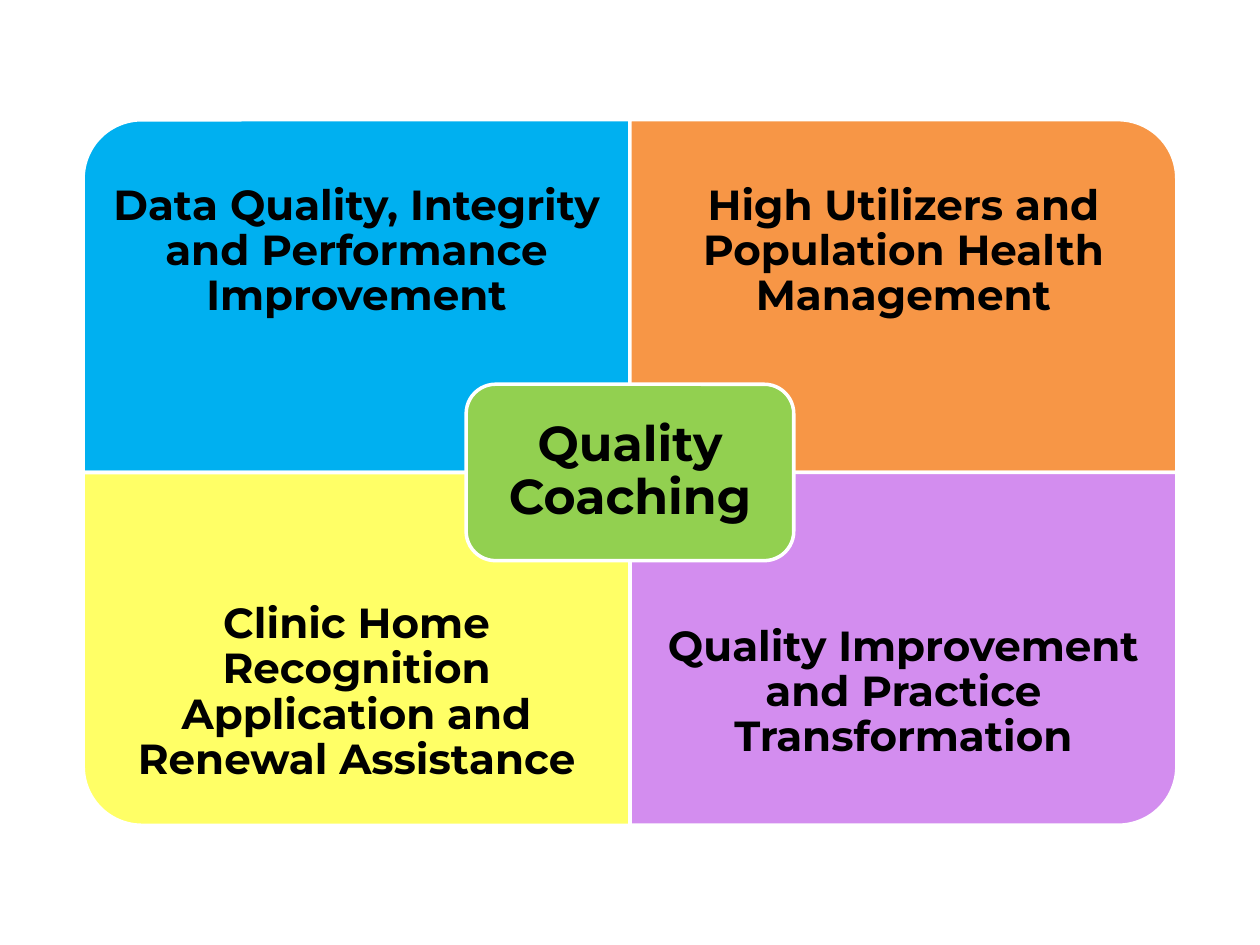
"""Build a four-quadrant Quality Coaching slide."""
from dataclasses import dataclass

from pptx import Presentation
from pptx import util as u
from pptx.dml.color import RGBColor
from pptx.enum import shapes, text

SCALE = 9144
COLOURS = {
    "blue": "00B0F0",
    "orange": "F79646",
    "yellow": "FFFF66",
    "purple": "D38DEF",
    "green": "92D050",
    "white": "FFFFFF",
    "black": "000000",
}
SLIDE_WIDTH, SLIDE_HEIGHT = 1000, 750
CENTRE_X, CENTRE_Y = SLIDE_WIDTH // 2, SLIDE_HEIGHT // 2
QUADRANT_WIDTH, QUADRANT_HEIGHT = 434, 280
LABEL_HEIGHT = 210
HUB_WIDTH, HUB_HEIGHT = 260, 140
HUB_INSET = 7


@dataclass(frozen=True)
class Box:
    left: int
    top: int
    width: int
    height: int

    def emu(self) -> tuple[int, ...]:
        return tuple(value * SCALE for value in (self.left, self.top, self.width, self.height))


@dataclass(frozen=True)
class Quadrant:
    label: str
    colour: str
    column: int
    row: int
    rotation: int


QUADRANTS = (
    Quadrant("Data Quality, Integrity and Performance Improvement", "blue", 0, 0, 270),
    Quadrant("High Utilizers and Population Health Management", "orange", 1, 0, 0),
    Quadrant("Clinic Home Recognition Application and Renewal Assistance", "yellow", 0, 1, 180),
    Quadrant("Quality Improvement and Practice Transformation", "purple", 1, 1, 90),
)


def colour_of(name: str) -> RGBColor:
    return RGBColor.from_string(COLOURS[name])


def draw_panel(slide, kind, box: Box, colour: str, rotation: int = 0) -> None:
    shape = slide.shapes.add_shape(kind, *box.emu())
    shape.rotation = rotation
    shape.shadow.inherit = False
    shape.fill.solid()
    shape.fill.fore_color.rgb = colour_of(colour)
    shape.line.color.rgb = colour_of("white")
    shape.line.width = u.Pt(2)


def draw_label(slide, label: str, box: Box, size: int, inset: int) -> None:
    frame = slide.shapes.add_textbox(*box.emu()).text_frame
    frame.word_wrap = True
    frame.vertical_anchor = text.MSO_ANCHOR.MIDDLE
    frame.margin_left = frame.margin_right = inset * SCALE
    frame.margin_top = frame.margin_bottom = inset * SCALE
    paragraph = frame.paragraphs[0]
    paragraph.text = label
    paragraph.alignment = text.PP_ALIGN.CENTER
    paragraph.line_spacing = 0.9
    paragraph.font.name = "Montserrat"
    paragraph.font.size = u.Pt(size)
    paragraph.font.bold = True
    paragraph.font.color.rgb = colour_of("black")


def draw_quadrant(slide, quadrant: Quadrant) -> None:
    left = CENTRE_X + (quadrant.column - 1) * QUADRANT_WIDTH
    top = CENTRE_Y + (quadrant.row - 1) * QUADRANT_HEIGHT
    width, height = QUADRANT_WIDTH, QUADRANT_HEIGHT
    if quadrant.rotation % 180:
        width, height = height, width
    panel = Box(
        left + (QUADRANT_WIDTH - width) // 2,
        top + (QUADRANT_HEIGHT - height) // 2,
        width,
        height,
    )
    label_top = top + quadrant.row * (QUADRANT_HEIGHT - LABEL_HEIGHT)
    draw_panel(slide, shapes.MSO_SHAPE.ROUND_1_RECTANGLE, panel, quadrant.colour, quadrant.rotation)
    draw_label(slide, quadrant.label, Box(left, label_top, QUADRANT_WIDTH, LABEL_HEIGHT), 24, 19)


def draw_hub(slide) -> None:
    left, top = CENTRE_X - HUB_WIDTH // 2, CENTRE_Y - HUB_HEIGHT // 2
    panel = Box(left, top, HUB_WIDTH, HUB_HEIGHT)
    label = Box(
        left + HUB_INSET,
        top + HUB_INSET,
        HUB_WIDTH - 2 * HUB_INSET,
        HUB_HEIGHT - 2 * HUB_INSET,
    )
    draw_panel(slide, shapes.MSO_SHAPE.ROUNDED_RECTANGLE, panel, "green")
    draw_label(slide, "Quality Coaching", label, 28, 12)


def main() -> None:
    presentation = Presentation()
    presentation.slide_width = SLIDE_WIDTH * SCALE
    presentation.slide_height = SLIDE_HEIGHT * SCALE
    slide = presentation.slides.add_slide(presentation.slide_layouts[6])
    for quadrant in QUADRANTS:
        draw_quadrant(slide, quadrant)
    draw_hub(slide)
    presentation.save("out.pptx")


if __name__ == "__main__":
    main()
